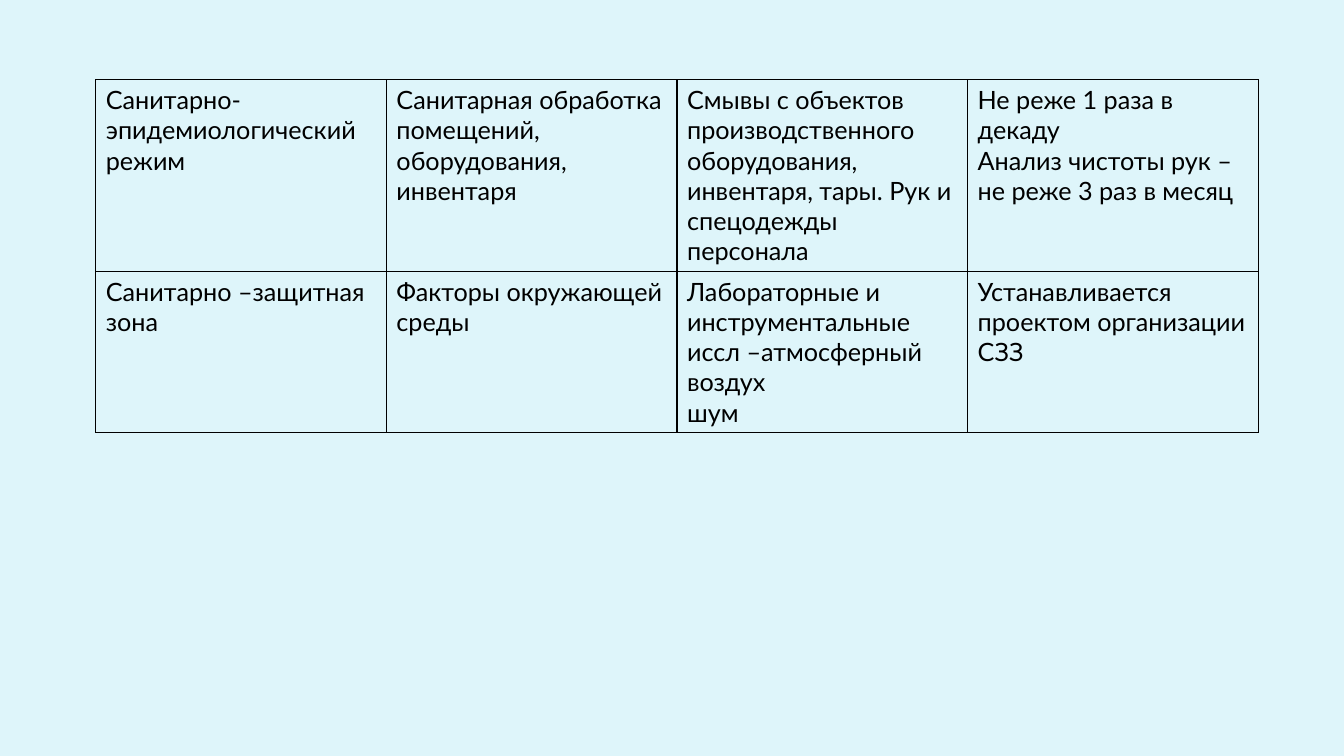
from lxml.etree import SubElement
from pptx import Presentation
from pptx.dml.color import RGBColor
from pptx.oxml.ns import qn
from pptx.util import Inches, Pt

# Content: one tuple per row, one list of paragraphs per cell
CONTROL_ROWS = [
    (
        ["Санитарно-эпидемиологический режим"],
        ["Санитарная обработка помещений, оборудования, инвентаря"],
        ["Смывы с объектов производственного оборудования, инвентаря, тары. "
         "Рук и спецодежды персонала"],
        ["Не реже 1 раза в декаду", "Анализ чистоты рук – не реже 3 раз в месяц"],
    ),
    (
        ["Санитарно –защитная зона"],
        ["Факторы окружающей среды"],
        ["Лабораторные и инструментальные иссл –атмосферный воздух", "шум"],
        ["Устанавливается проектом организации СЗЗ"],
    ),
]
ROW_HEIGHTS = [1.89, 1.6]
LEFT, TOP, WIDTH = 0.95, 0.79, 11.53
BACKGROUND, INK = "DEF5FA", "000000"


def color(hex_text):
    return RGBColor.from_string(hex_text)


def write(frame, paragraphs, font="Lato", size=18, ink=INK):
    for index, text in enumerate(paragraphs):
        para = frame.add_paragraph() if index else frame.paragraphs[0]
        span = para.add_run()
        span.text = text
        span.font.name = font
        span.font.size = Pt(size)
        span.font.color.rgb = color(ink)


def add_borders(cell, ink=INK, points=1):
    properties = cell._tc.get_or_add_tcPr()
    for side in ("a:lnL", "a:lnR", "a:lnT", "a:lnB"):
        line = SubElement(properties, qn(side), w=str(Pt(points)))
        fill = SubElement(line, qn("a:solidFill"))
        SubElement(fill, qn("a:srgbClr"), val=ink)


def main():
    deck = Presentation()
    deck.slide_width, deck.slide_height = Inches(13.33), Inches(7.5)
    page = deck.slides.add_slide(deck.slide_layouts[6])
    page.background.fill.solid()
    page.background.fill.fore_color.rgb = color(BACKGROUND)

    # Table with equal columns
    table = page.shapes.add_table(
        len(CONTROL_ROWS), len(CONTROL_ROWS[0]),
        Inches(LEFT), Inches(TOP), Inches(WIDTH), Inches(sum(ROW_HEIGHTS)),
    ).table
    table.first_row = table.horz_banding = False
    for row, height in zip(table.rows, ROW_HEIGHTS):
        row.height = Inches(height)

    # Cells: borders come before the fill in the cell properties
    for row, contents in zip(table.rows, CONTROL_ROWS):
        for cell, paragraphs in zip(row.cells, contents):
            add_borders(cell)
            cell.fill.background()
            write(cell.text_frame, paragraphs)

    deck.save("out.pptx")


if __name__ == "__main__":
    main()
